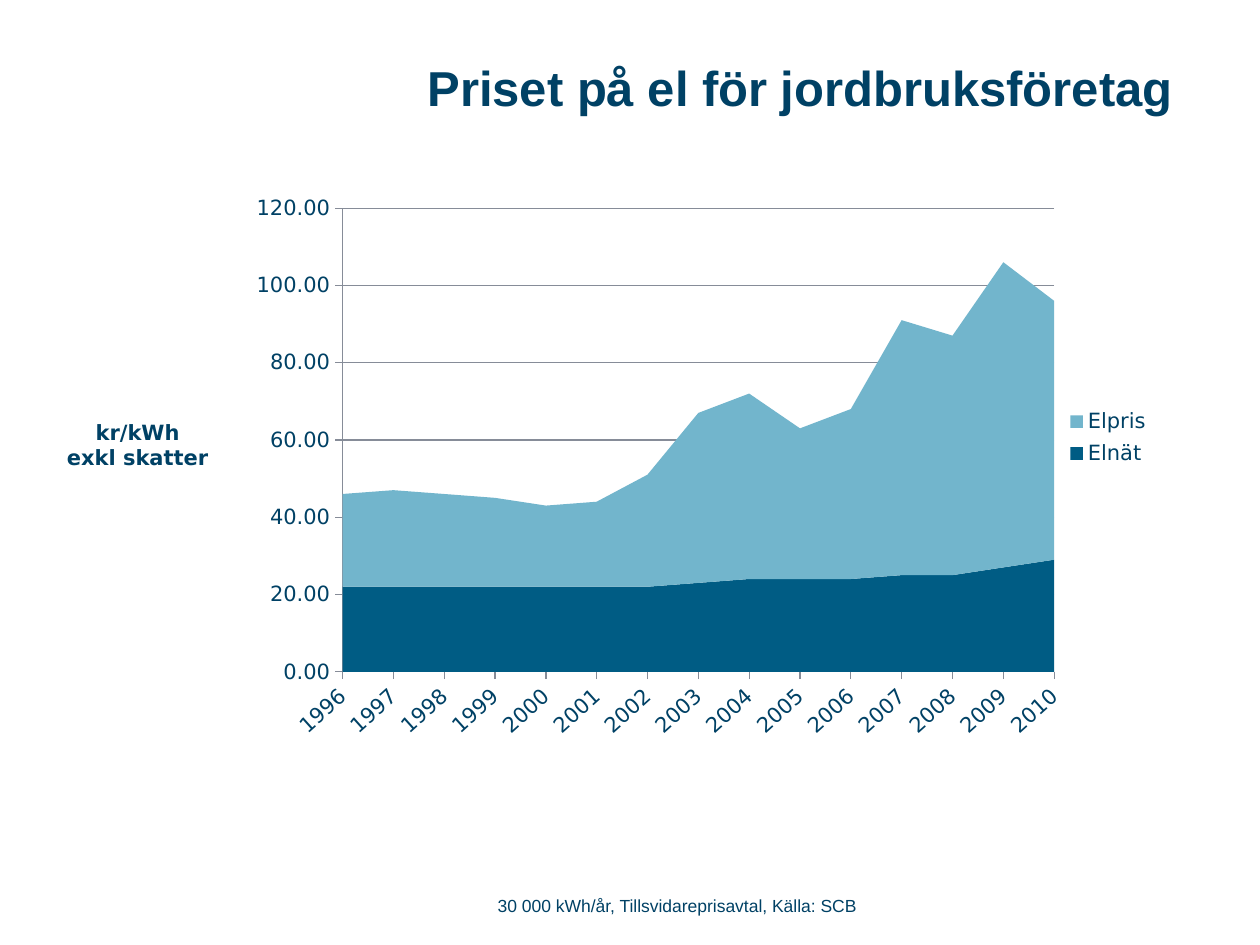
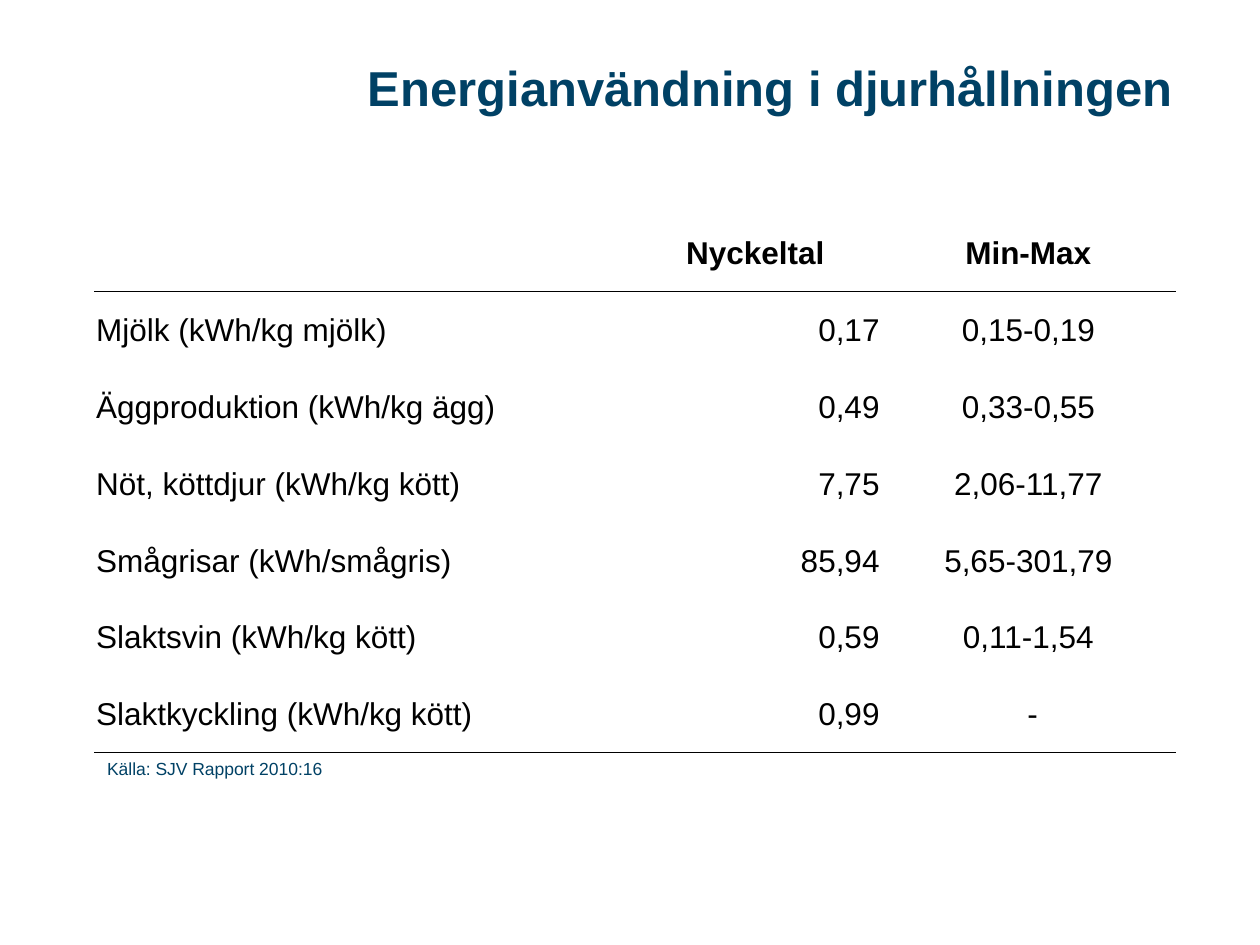
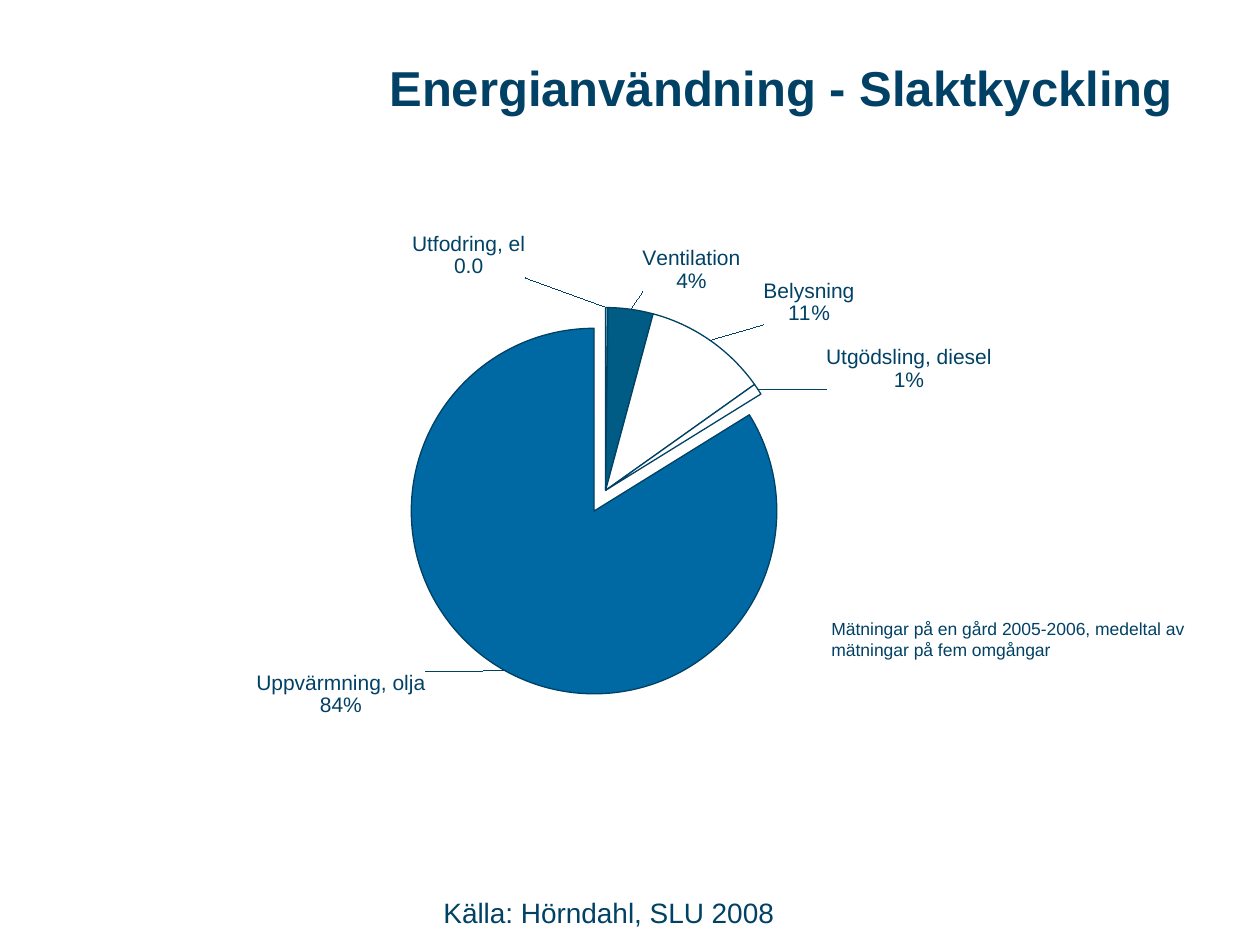
"""Builds three slides on energy prices and energy use in farming."""
from typing import NamedTuple

from pptx import Presentation
from pptx import util as u
from pptx.chart import data as cd
from pptx.dml import color as dml
from pptx.enum import chart as ch
from pptx.enum import text
from pptx.oxml import parse_xml
from pptx.oxml import ns

HUES = {"navy": "004165", "deep": "005C84", "sky": "72B5CC", "blue": "0068A2",
        "white": "FFFFFF", "black": "000000", "gray": "868C98"}
FONT = "Arial"
LEFT, MID, RIGHT = text.PP_ALIGN.LEFT, text.PP_ALIGN.CENTER, text.PP_ALIGN.RIGHT


class Box(NamedTuple):
    """A frame in centimetres."""
    left: float
    top: float
    width: float
    height: float

    def cms(self) -> list:
        return [u.Cm(side) for side in self]


class Note(NamedTuple):
    """A small text with its frame."""
    words: str
    box: Box
    size: int = 10
    align: text.PP_ALIGN = LEFT


class Slice(NamedTuple):
    """A piece of the pie with the shift of its label in percent."""
    name: str
    value: float
    hue: str
    dx: float
    dy: float
    form: str = "0%"


HEAD = Box(5.4, 1.01, 18.49, 1.5)
YEARS = [str(year) for year in range(1996, 2011)]
PRICES = [
    ("Elnät", "deep", [22, 22, 22, 22, 22, 22, 22, 23, 24, 24, 24, 25, 25, 27, 29]),
    ("Elpris", "sky", [24, 25, 24, 23, 21, 22, 29, 44, 48, 39, 44, 66, 62, 79, 67]),
]
ROWS = [
    ("", "Nyckeltal", "Min-Max"),
    ("Mjölk (kWh/kg mjölk)", "0,17", "0,15-0,19"),
    ("Äggproduktion (kWh/kg ägg)", "0,49", "0,33-0,55"),
    ("Nöt, köttdjur (kWh/kg kött)", "7,75", "2,06-11,77"),
    ("Smågrisar (kWh/smågris)", "85,94", "5,65-301,79"),
    ("Slaktsvin (kWh/kg kött)", "0,59", "0,11-1,54"),
    ("Slaktkyckling (kWh/kg kött)", "0,99", " -"),
]
COLS = [11.89, 3.96, 5.94]
RULES = {0: "B", 1: "T", len(ROWS) - 1: "B"}
PIECES = [
    Slice("Utfodring, el", 0.2, "sky", -12.9, -4, "0.0"),
    Slice("Ventilation", 4, "deep", 1, -1.8),
    Slice("Belysning", 11, "white", 4.6, -1.7),
    Slice("Utgödsling, diesel", 1, "white", 5.8, 1.1),
    Slice("Uppvärmning, olja", 84, "blue", -7.1, -1),
]


def tint(hue: str) -> dml.RGBColor:
    return dml.RGBColor.from_string(HUES[hue])


def style(font, size: int, hue: str = "navy", bold: bool = False, name: str = FONT) -> None:
    font.name, font.size, font.bold = name, u.Pt(size), bold
    font.color.rgb = tint(hue)


def ink(line, hue: str, width: float = 0.75) -> None:
    line.color.rgb = tint(hue)
    line.width = u.Pt(width)


def start(deck, title: str):
    """Adds a slide with its title."""
    slide = deck.slides.add_slide(deck.slide_layouts[5])
    head = slide.shapes.title
    head.left, head.top, head.width, head.height = HEAD.cms()
    frame = head.text_frame
    frame.text = title
    frame.auto_size = text.MSO_AUTO_SIZE.NONE
    frame.vertical_anchor = text.MSO_ANCHOR.MIDDLE
    para = frame.paragraphs[0]
    para.alignment = RIGHT
    style(para.font, 28, bold=True)
    return slide


def write(slide, note: Note) -> None:
    frame = slide.shapes.add_textbox(*note.box.cms()).text_frame
    frame.word_wrap = True
    frame.auto_size = text.MSO_AUTO_SIZE.SHAPE_TO_FIT_TEXT
    frame.text = note.words
    para = frame.paragraphs[0]
    para.alignment = note.align
    style(para.font, note.size)


def place(host, spot: int, edge: bool = True, inner: bool = False, **sides: float) -> None:
    """Puts a manual layout, in percent of the chart, into a chart part."""
    for old in host.findall(ns.qn("c:layout")):
        host.remove(old)
    parts = '<c:layoutTarget val="inner"/>' if inner else ""
    if edge:
        parts += '<c:xMode val="edge"/><c:yMode val="edge"/>'
    parts += "".join(f'<c:{key} val="{size / 100:.3f}"/>' for key, size in sides.items())
    host.insert(spot, parse_xml(
        f'<c:layout {ns.nsdecls("c")}><c:manualLayout>{parts}</c:manualLayout></c:layout>'))


def graph(slide, kind: ch.XL_CHART_TYPE, box: Box, data, name: str):
    chart = slide.shapes.add_chart(kind, *box.cms(), data).chart
    chart.has_title = chart.has_legend = False
    style(chart.font, 12, name=name)
    return chart


def areas(slide) -> None:
    """Draws the stacked price chart."""
    data = cd.CategoryChartData(number_format="#,##0.00")
    data.categories = YEARS
    for name, _, vals in PRICES:
        data.add_series(name, vals)
    face = "DejaVu Sans"
    chart = graph(slide, ch.XL_CHART_TYPE.AREA_STACKED,
                  Box(1.27, 3.73, 22.63, 11.4), data, face)
    plot = chart.plots[0]
    plot.vary_by_categories = False
    for part, (_, hue, _) in zip(plot.series, PRICES):
        part.format.fill.solid()
        part.format.fill.fore_color.rgb = tint(hue)

    years, cost = chart.category_axis, chart.value_axis
    for axis in (years, cost):
        axis.major_tick_mark = ch.XL_TICK_MARK.OUTSIDE
        axis.minor_tick_mark = ch.XL_TICK_MARK.NONE
        style(axis.tick_labels.font, 12, name=face)
        ink(axis.format.line, "gray")
    years.has_major_gridlines = False
    turn = years._element.find(ns.qn("c:txPr")).find(ns.qn("a:bodyPr"))
    turn.set("rot", "-2520000")
    turn.set("vert", "horz")

    cost.minimum_scale, cost.maximum_scale, cost.major_unit = 0, 120, 20
    cost.has_major_gridlines = True
    ink(cost.major_gridlines.format.line, "gray")
    cost.tick_labels.number_format = "#,##0.00"
    cost.tick_labels.number_format_is_linked = False
    cost._element.find(ns.qn("c:crossBetween")).set("val", "midCat")
    label = cost.axis_title
    label.text_frame.text = "kr/kWh\nexkl skatter"
    for para in label.text_frame.paragraphs:
        style(para.font, 12, bold=True, name=face)
    flat = label.text_frame._txBody.find(ns.qn("a:bodyPr"))
    flat.set("rot", "0")
    flat.set("vert", "horz")

    chart.has_legend = True
    chart.legend.position = ch.XL_LEGEND_POSITION.RIGHT
    chart.legend.include_in_layout = False
    style(chart.legend.font, 12, name=face)
    field = chart._chartSpace.chart.plotArea
    place(field, 0, inner=True, x=24.9, y=4.1, w=63.4, h=82)
    place(chart.legend._element, 1, x=89.1, y=38.4, w=8, h=12.5)
    place(label._element, 1, x=0, y=40.6)


def grid(slide) -> None:
    """Draws the table of key figures."""
    box = Box(1.91, 4.32, sum(COLS), 10.85)
    table = slide.shapes.add_table(len(ROWS), len(COLS), *box.cms()).table
    table.first_row = table.horz_banding = False
    for col, width in zip(table.columns, COLS):
        col.width = u.Cm(width)
    for r, row in enumerate(ROWS):
        table.rows[r].height = u.Cm(box.height / len(ROWS))
        for c, words in enumerate(row):
            cell = table.cell(r, c)
            cell.fill.background()
            cell.vertical_anchor = text.MSO_ANCHOR.MIDDLE
            cell.margin_left = cell.margin_right = cell.margin_top = u.Cm(0.03)
            cell.margin_bottom = 0
            cell.text = words
            para = cell.text_frame.paragraphs[0]
            para.alignment = (LEFT, RIGHT if r else LEFT, MID)[c]
            style(para.font, 18, "black", bold=r == 0)
            if r in RULES:
                side = RULES[r]
                cell._tc.get_or_add_tcPr().insert(0, parse_xml(
                    f'<a:ln{side} {ns.nsdecls("a")} w="6350"><a:solidFill>'
                    f'<a:srgbClr val="{HUES["black"]}"/></a:solidFill></a:ln{side}>'))


def tag(spot: int, piece: Slice):
    """Makes the label of a slice."""
    shows = {"LegendKey": 0, "Val": 0, "CatName": 1, "SerName": 0,
             "Percent": 1, "BubbleSize": 0}
    flags = "".join(f'<c:show{key} val="{on}"/>' for key, on in shows.items())
    label = parse_xml(
        f'<c:dLbl {ns.nsdecls("c")}><c:idx val="{spot}"/>'
        f'<c:numFmt formatCode="{piece.form}" sourceLinked="0"/>'
        f'<c:dLblPos val="outEnd"/>{flags}<c:separator>\n</c:separator></c:dLbl>')
    place(label, 1, edge=False, x=piece.dx, y=piece.dy)
    return label


def pie(slide) -> None:
    """Draws the shares of energy use."""
    data = cd.CategoryChartData()
    data.categories = [piece.name for piece in PIECES]
    data.add_series("Series 1", [piece.value for piece in PIECES])
    chart = graph(slide, ch.XL_CHART_TYPE.PIE, Box(1.9, 4.32, 21.59, 11.2), data, FONT)
    part = chart.plots[0].series[0]
    ink(part.format.line, "navy")
    labels = part.data_labels
    labels.show_value = False
    labels.show_category_name = labels.show_percentage = True
    labels.position = ch.XL_LABEL_POSITION.OUTSIDE_END
    style(labels.font, 12)
    for spot, piece in enumerate(PIECES):
        look = part.points[spot].format
        look.fill.solid()
        look.fill.fore_color.rgb = tint(piece.hue)
        ink(look.line, "navy")
        labels._element.insert(spot, tag(spot, piece))
    last = part._element.findall(ns.qn("c:dPt"))[-1]
    last.find(ns.qn("c:spPr")).addprevious(
        parse_xml(f'<c:explosion {ns.nsdecls("c")} val="13"/>'))
    field = chart._chartSpace.chart.plotArea
    place(field, 0, inner=True, x=24.6, y=16.8, w=46.3, h=65.8)


def main() -> None:
    deck = Presentation()
    deck.slide_width, deck.slide_height = u.Cm(25.4), u.Cm(19.05)

    slide = start(deck, "Priset på el för jordbruksföretag")
    areas(slide)
    write(slide, Note("30 000 kWh/år, Tillsvidareprisavtal, Källa: SCB",
                      Box(7.88, 17.92, 9.63, 0.69), align=RIGHT))

    slide = start(deck, "Energianvändning i djurhållningen")
    grid(slide)
    write(slide, Note("Källa: SJV Rapport 2010:16", Box(1.91, 15.15, 5.79, 1.14)))

    slide = start(deck, "Energianvändning - Slaktkyckling")
    pie(slide)
    write(slide, Note("Mätningar på en gård 2005-2006, medeltal av mätningar på fem omgångar",
                      Box(16.51, 12.33, 7.9, 1.12)))
    write(slide, Note("Källa: Hörndahl, SLU 2008", Box(8.69, 17.93, 7.9, 0.94), 16))

    deck.save("out.pptx")


if __name__ == "__main__":
    main()
